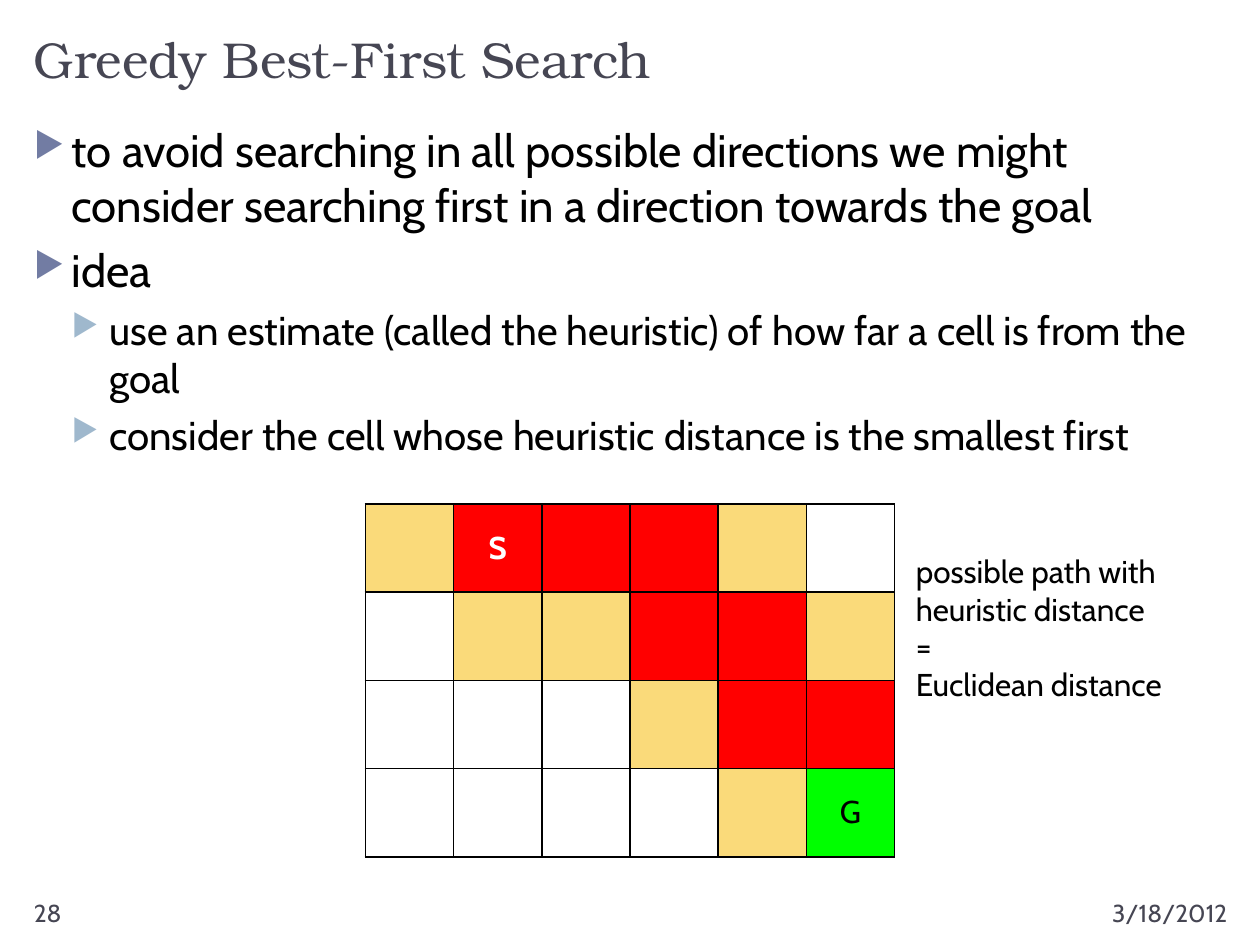
from dataclasses import dataclass

from lxml.etree import SubElement
from pptx import Presentation
from pptx.dml.color import RGBColor
from pptx.enum.text import MSO_ANCHOR as Anchor, PP_ALIGN as Align
from pptx.oxml.ns import qn
from pptx.util import Inches, Pt


@dataclass(frozen=True)
class Theme:
    heading_font: str = "TeX Gyre Bonum"
    body_font: str = "Cabin"
    muted: str = "464653"
    ink: str = "000000"
    paper: str = "FFFFFF"
    visited: str = "FF0000"
    frontier: str = "FADA7A"
    goal: str = "00FF00"
    title_size: float = 28.8
    label_size: float = 18
    footer_size: float = 14
    # One entry per outline level
    outline_sizes: tuple = (26, 23)
    outline_gaps: tuple = (6, 5)
    bullet_colors: tuple = ("727CA3", "9FB8CD")


THEME = Theme()
INDENT = Inches(0.3)

OUTLINE = [
    (0, "to avoid searching in all possible directions we might "
        "consider searching first in a direction towards the goal"),
    (0, "idea"),
    (1, "use an estimate (called the heuristic) of how far a cell is from the goal"),
    (1, "consider the cell whose heuristic distance is the smallest first"),
]

# S start, G goal, x on the path, o looked at, . untouched
GRID = ["oSxxo.",
        ".ooxxo",
        "...oxx",
        "....oG"]
CELL_FILLS = {"S": THEME.visited, "x": THEME.visited, "o": THEME.frontier,
              ".": THEME.paper, "G": THEME.goal}


def format_runs(para, size, color, font=THEME.body_font, bold=False):
    for span in para.runs:
        span.font.name = font
        span.font.size = Pt(size)
        span.font.bold = bold
        span.font.color.rgb = RGBColor.from_string(color)


def add_text(page, box, text, size, color, font=THEME.body_font,
             align=Align.LEFT, anchor=Anchor.TOP):
    frame = page.shapes.add_textbox(*box).text_frame
    frame.word_wrap = True
    frame.vertical_anchor = anchor
    para = frame.paragraphs[0]
    para.text = text
    para.alignment = align
    format_runs(para, size, color, font)


def add_bullet(para, level):
    props = para._p.get_or_add_pPr()
    props.set("marL", str(INDENT * (level + 1)))
    props.set("indent", str(-INDENT))
    color = SubElement(props, qn("a:buClr"))
    SubElement(color, qn("a:srgbClr"), val=THEME.bullet_colors[level])
    SubElement(props, qn("a:buSzPct"), val="76000")
    SubElement(props, qn("a:buChar"), char="▶")


def add_outline(page, box, items):
    frame = page.shapes.add_textbox(*box).text_frame
    frame.word_wrap = True
    for index, (level, text) in enumerate(items):
        para = frame.add_paragraph() if index else frame.paragraphs[0]
        para.text = text
        para.level = level
        para.space_before = Pt(THEME.outline_gaps[level])
        add_bullet(para, level)
        format_runs(para, THEME.outline_sizes[level], THEME.ink)


def add_borders(cell):
    """Draw a one-point line on all four sides; call before the cell is filled."""
    props = cell._tc.get_or_add_tcPr()
    for side in ("lnL", "lnR", "lnT", "lnB"):
        line = SubElement(props, qn(f"a:{side}"), w=str(Pt(1)))
        fill = SubElement(line, qn("a:solidFill"))
        SubElement(fill, qn("a:srgbClr"), val=THEME.ink)


def add_search_grid(page, box, grid):
    left, top, width, height = box
    table = page.shapes.add_table(len(grid), len(grid[0]), *box).table
    table.first_row = table.horz_banding = False
    for column in table.columns:
        column.width = width // len(grid[0])
    for row in table.rows:
        row.height = height // len(grid)
    for row_index, marks in enumerate(grid):
        for column_index, mark in enumerate(marks):
            cell = table.cell(row_index, column_index)
            add_borders(cell)
            cell.fill.solid()
            cell.fill.fore_color.rgb = RGBColor.from_string(CELL_FILLS[mark])
            if mark in "SG":
                is_start = mark == "S"
                cell.vertical_anchor = Anchor.MIDDLE
                para = cell.text_frame.paragraphs[0]
                para.text = mark
                para.alignment = Align.CENTER
                format_runs(para, THEME.label_size,
                            THEME.paper if is_start else THEME.ink, bold=is_start)


def add_footer(page, box, number, date):
    for text, align in ((number, Align.LEFT), (date, Align.RIGHT)):
        add_text(page, box, text, THEME.footer_size, THEME.muted, align=align)


def inches(*lengths):
    return tuple(Inches(length) for length in lengths)


def main():
    deck = Presentation()
    deck.slide_width, deck.slide_height = inches(10, 7.5)
    page = deck.slides.add_slide(deck.slide_layouts[6])
    add_text(page, inches(0.17, 0.17, 9.67, 0.58), "Greedy Best-First Search",
             THEME.title_size, THEME.muted, THEME.heading_font, anchor=Anchor.BOTTOM)
    add_footer(page, inches(0.17, 7.08, 9.67, 0.27), "28", "3/18/2012")
    add_outline(page, inches(0.17, 0.92, 9.67, 6), OUTLINE)
    add_search_grid(page, inches(2.9, 4, 4.2, 2.8), GRID)
    add_text(page, inches(7.17, 4.33, 2.2, 1.01),
             "possible path with\vheuristic distance\v=\vEuclidean distance",
             THEME.label_size, THEME.ink)
    deck.save("out.pptx")


if __name__ == "__main__":
    main()
